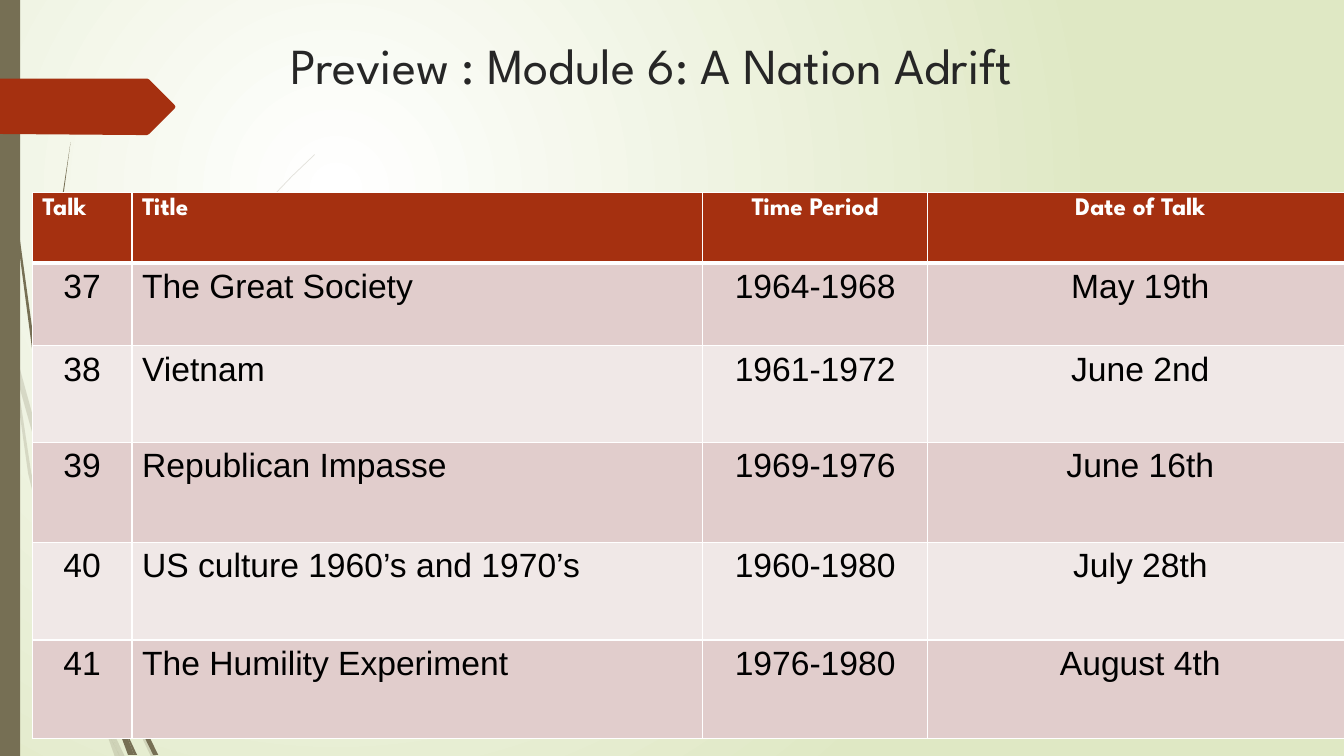
from lxml.etree import SubElement
from pptx import Presentation
from pptx.dml.color import RGBColor
from pptx.enum.shapes import MSO_SHAPE
from pptx.enum.text import MSO_ANCHOR, PP_ALIGN
from pptx.oxml import parse_xml
from pptx.oxml.ns import nsdecls, qn
from pptx.util import Inches, Pt

TITLE = "Preview : Module 6: A Nation Adrift"
HEADER = ("Talk", "Title", "Time Period", "Date of Talk")
TALKS = [
    ("37", "The Great Society", "1964-1968", "May 19th"),
    ("38", "Vietnam", "1961-1972", "June 2nd"),
    ("39", "Republican Impasse", "1969-1976", "June 16th"),
    ("40", "US culture 1960’s and 1970’s", "1960-1980", "July 28th"),
    ("41", "The Humility Experiment", "1976-1980", "August 4th"),
]
COLUMNS = (0.99, 5.66, 2.23, 4.22)
ROWS = (0.7, 0.82, 0.96, 0.99, 0.97, 0.98)
TABLE_LEFT, TABLE_TOP = 0.32, 1.91

BROWN, RUST, WHITE, INK = "766F54", "A53010", "FFFFFF", "262626"
GREEN, BLACK = "DFE8C4", "000000"
BANDS = ("E1CDCC", "F0E8E7")
TITLE_FONT, BODY_FONT = "League Spartan", "Arial"

# Outlines in hundredths of an inch
PALE_GRASS = [
    [(11, 350), (9, 322), (0, 282), (0, 299), (10, 344)],
    [(58, 522), (84, 599), (85, 586), (62, 520), (14, 345), (17, 376)],
    [(92, 607), (88, 596), (88, 610), (123, 694), (150, 751), (155, 751), (127, 692)],
    [(119, 751), (124, 751), (105, 711)],
    [(93, 683), (70, 619), (31, 469), (17, 376), (11, 350), (28, 470), (65, 621),
     (92, 693), (101, 714), (99, 707)],
    [(84, 599), (87, 646), (93, 683), (96, 692), (105, 711), (103, 706), (91, 646),
     (88, 610), (88, 608)],
    [(88, 584), (110, 462), (160, 349), (229, 245), (268, 198), (290, 175), (312, 154),
     (312, 153), (289, 175), (268, 197), (228, 244), (158, 348), (107, 461), (85, 584),
     (85, 586), (88, 596)],
    [(101, 714), (114, 751), (119, 751)],
    [(88, 608), (88, 596), (85, 586), (84, 599)],
    [(96, 692), (93, 683), (99, 707), (101, 714), (119, 751), (105, 711)],
]
DARK_GRASS = [
    [(7, 110), (17, 233), (33, 355), (56, 477), (57, 481), (55, 457), (55, 453),
     (36, 355), (19, 232), (8, 109), (5, 48), (4, 0), (3, 0), (4, 48)],
    [(88, 592), (106, 645), (106, 631), (93, 590), (60, 472), (64, 505)],
    [(113, 649), (110, 641), (111, 656), (132, 708), (152, 749), (157, 749), (136, 706)],
    [(110, 691), (98, 657), (72, 556), (64, 505), (57, 477), (68, 557), (93, 659),
     (111, 708), (117, 722), (116, 717)],
    [(60, 472), (58, 453), (54, 349), (58, 245), (63, 193), (70, 141), (62, 193),
     (56, 245), (52, 349), (55, 449)],
    [(133, 749), (136, 749), (122, 719)],
    [(57, 477), (64, 505), (60, 472), (55, 449), (55, 453)],
    [(111, 633), (125, 552), (158, 476), (205, 406), (231, 374), (245, 359), (261, 344),
     (260, 344), (245, 358), (231, 373), (204, 405), (156, 474), (122, 551), (106, 631),
     (110, 641)],
    [(117, 722), (127, 749), (131, 749)],
    [(106, 645), (110, 691), (116, 706), (122, 719), (121, 716), (111, 656), (109, 651)],
    [(106, 645), (109, 651), (111, 656), (110, 641), (106, 631)],
    [(116, 706), (110, 691), (116, 717), (117, 722), (130, 749), (133, 749), (122, 719)],
]
TAG = [(173, 108), (148, 133), (146, 134), (136, 134), (0, 133), (0, 78), (146, 78),
       (148, 79), (173, 104), (174, 106)]


def color(value):
    return RGBColor.from_string(value)


def paint(shape, value, alpha=100):
    """Fill without outline or shadow; alpha is the opacity in percent."""
    shape.shadow.inherit = False
    shape.fill.solid()
    shape.fill.fore_color.rgb = color(value)
    shape.line.fill.background()
    if alpha < 100:
        tone = shape.element.spPr.find(qn("a:solidFill"))[0]
        SubElement(tone, qn("a:alpha"), val=str(alpha * 1000))


def draw_outline(shapes, points, value, alpha=100):
    builder = shapes.build_freeform(*points[0], scale=Inches(0.01))
    builder.add_line_segments(points[1:], close=True)
    paint(builder.convert_to_shape(), value, alpha)


def write(frame, text, font, size, ink, bold=False, align=PP_ALIGN.LEFT):
    para = frame.paragraphs[0]
    para.alignment = align
    span = para.add_run()
    span.text = text
    span.font.name, span.font.size, span.font.bold = font, Pt(size), bold
    span.font.color.rgb = color(ink)


def set_borders(cell, **widths):
    """Draw white cell edges; widths in points are keyed L, R, T, B."""
    properties = cell._tc.get_or_add_tcPr()
    for place, (edge, width) in enumerate(widths.items()):
        properties.insert(place, parse_xml(
            f'<a:ln{edge} {nsdecls("a")} w="{Pt(width)}"><a:solidFill>'
            f'<a:srgbClr val="{WHITE}"/></a:solidFill></a:ln{edge}>'))


def set_background(slide):
    fill = slide.background.fill
    fill.gradient()
    for stop, value, position in zip(fill.gradient_stops, (WHITE, GREEN), (0, 1)):
        stop.color.rgb = color(value)
        stop.position = position
    gradient = slide.element.find(".//" + qn("a:gradFill"))
    gradient.replace(gradient.find(qn("a:lin")), parse_xml(
        f'<a:path {nsdecls("a")} path="circle">'
        '<a:fillToRect l="50000" t="50000" r="100000" b="100000"/></a:path>'))


def add_decoration(slide, height):
    for outlines, alpha in ((PALE_GRASS, 20), (DARK_GRASS, 100)):
        grass = slide.shapes.add_group_shape()
        for points in outlines:
            draw_outline(grass.shapes, points, BROWN, alpha)
    paint(slide.shapes.add_shape(MSO_SHAPE.RECTANGLE, 0, 0, Inches(0.2), height), BROWN)
    draw_outline(slide.shapes, TAG, RUST)


def add_title(slide):
    title = slide.shapes.title
    title.left, title.top = Inches(2.78), Inches(0.29)
    title.width, title.height = Inches(9.75), Inches(1.4)
    title.text_frame.vertical_anchor = MSO_ANCHOR.TOP
    write(title.text_frame, TITLE, TITLE_FONT, 36, INK)


def add_talks(slide):
    table = slide.shapes.add_table(
        len(ROWS), len(COLUMNS), Inches(TABLE_LEFT), Inches(TABLE_TOP),
        Inches(sum(COLUMNS)), Inches(sum(ROWS))).table
    for column, width in zip(table.columns, COLUMNS):
        column.width = Inches(width)
    for row, height in zip(table.rows, ROWS):
        row.height = Inches(height)
    for r, texts in enumerate([HEADER, *TALKS]):
        for c, text in enumerate(texts):
            cell = table.cell(r, c)
            header = r == 0
            left = c == 1 or (header and c == 0)
            cell.fill.solid()
            cell.fill.fore_color.rgb = color(RUST if header else BANDS[(r - 1) % 2])
            set_borders(cell, L=1, R=1, T=3 if r == 1 else 1, B=3 if header else 1)
            write(cell.text_frame, text, TITLE_FONT if header else BODY_FONT,
                  18 if header else 24, WHITE if header else BLACK, bold=header,
                  align=PP_ALIGN.LEFT if left else PP_ALIGN.CENTER)


def main():
    deck = Presentation()
    deck.slide_width, deck.slide_height = Inches(13.33), Inches(7.5)
    slide = deck.slides.add_slide(deck.slide_layouts[5])
    set_background(slide)
    add_decoration(slide, deck.slide_height)
    add_title(slide)
    add_talks(slide)
    deck.save("out.pptx")


if __name__ == "__main__":
    main()
